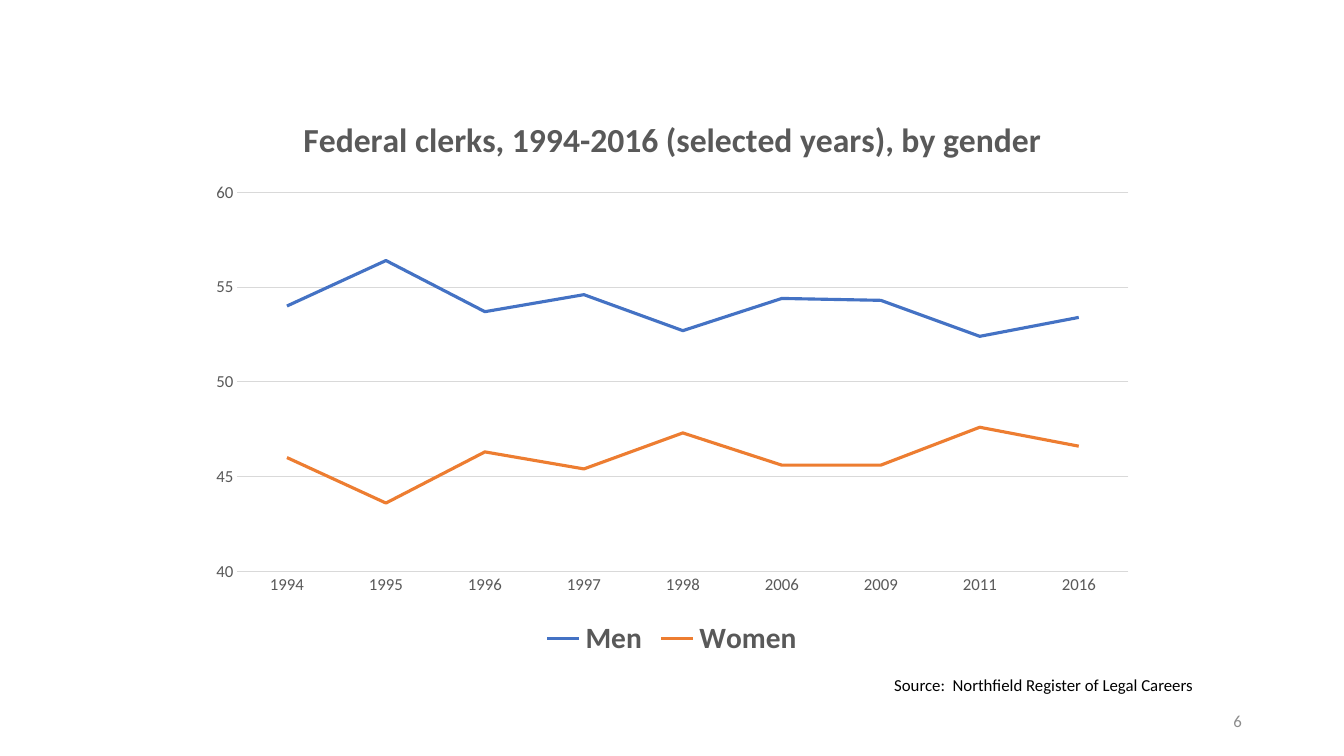
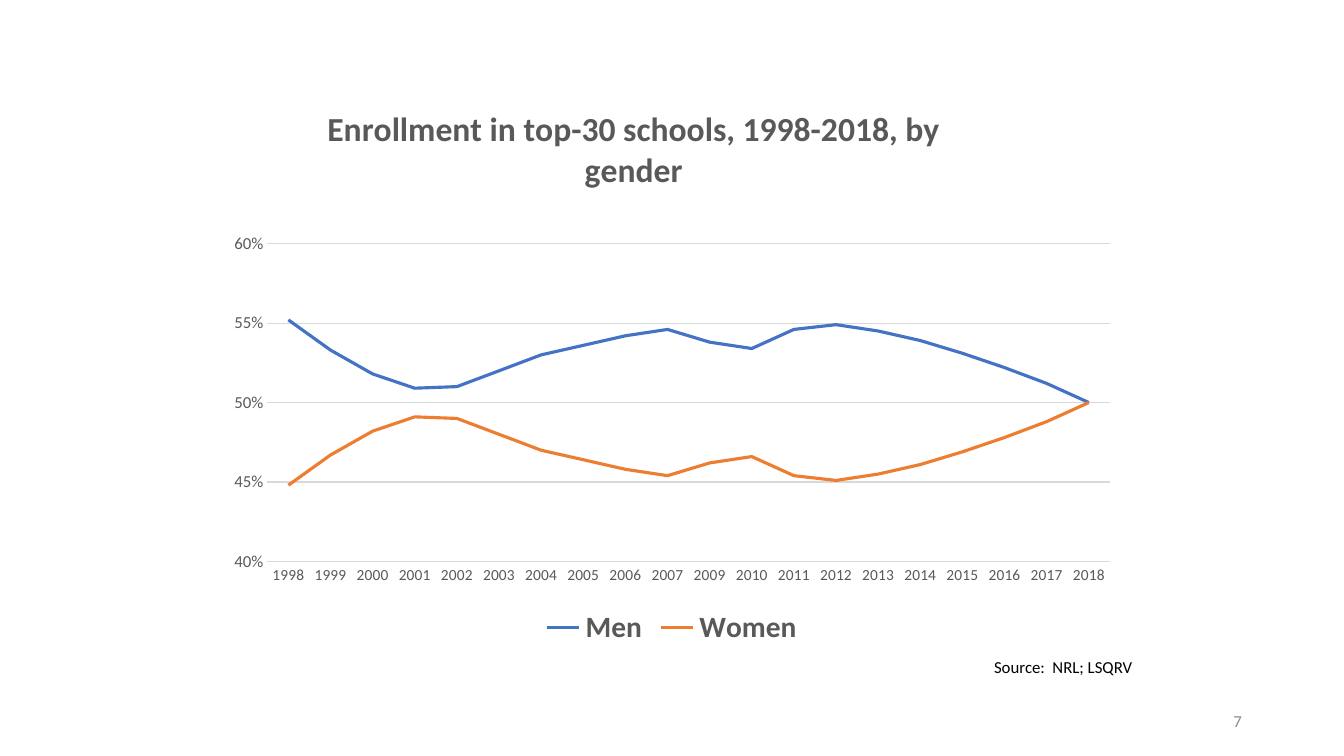
from pptx import Presentation
from pptx.chart.data import CategoryChartData
from pptx.dml.color import RGBColor
from pptx.enum.chart import (
    XL_CHART_TYPE, XL_LEGEND_POSITION, XL_MARKER_STYLE, XL_TICK_MARK)
from pptx.enum.text import MSO_ANCHOR, PP_ALIGN
from pptx.oxml import parse_xml
from pptx.oxml.ns import nsdecls, qn
from pptx.util import Inches, Pt

FONT = "Calibri"
BLACK = RGBColor(0x00, 0x00, 0x00)
DARK_GRAY = RGBColor(0x59, 0x59, 0x59)
PAGE_GRAY = RGBColor(0x8C, 0x8C, 0x8C)
GRID_GRAY = RGBColor(0xD9, 0xD9, 0xD9)
BLUE = RGBColor(0x44, 0x72, 0xC4)
ORANGE = RGBColor(0xED, 0x7D, 0x31)
SERIES_COLORS = {"Men": BLUE, "Women": ORANGE}
CHART_ASPECT = 0.6

# Widths are percent of the slide, title and plot places percent of the chart
CLERKS = {
    "title": "Federal clerks, 1994-2016 (selected years), by gender",
    "years": [1994, 1995, 1996, 1997, 1998, 2006, 2009, 2011, 2016],
    "values": {
        "Men": [54, 56.4, 53.7, 54.6, 52.7, 54.4, 54.3, 52.4, 53.4],
        "Women": [46, 43.6, 46.3, 45.4, 47.3, 45.6, 45.6, 47.6, 46.6],
    },
    "scale": (40, 60, 5),
    "number_format": "0",
    "year_size": 12,
    "width": 70.74,
    "title_at": (10.6, 3.1),
    "plot_at": (4.3, 17.45, 93.7, 66.45),
}
ENROLLMENT = {
    "title": "Enrollment in top-30 schools, 1998-2018, by\ngender",
    "years": [year for year in range(1998, 2019) if year != 2008],
    "values": {
        "Men": [0.552, 0.533, 0.518, 0.509, 0.51, 0.52, 0.53, 0.536, 0.542, 0.546,
                0.538, 0.534, 0.546, 0.549, 0.545, 0.539, 0.531, 0.522, 0.512, 0.5],
        "Women": [0.448, 0.467, 0.482, 0.491, 0.49, 0.48, 0.47, 0.464, 0.458, 0.454,
                  0.462, 0.466, 0.454, 0.451, 0.455, 0.461, 0.469, 0.478, 0.488, 0.5],
    },
    "scale": (0.4, 0.6, 0.05),
    "number_format": "0%",
    "year_size": 11,
    "width": 67.89,
    "title_at": (11.9, 0.2),
    "plot_at": (5.65, 25.45, 92.35, 58.1),
}


def format_font(font, size, color, bold=False):
    font.name = FONT
    font.size = Pt(size)
    font.bold = bold
    font.color.rgb = color


def write_text(frame, text, size=12, color=BLACK, bold=False, align=None):
    """Write each line of the text as a paragraph."""
    for index, line in enumerate(text.split("\n")):
        paragraph = frame.add_paragraph() if index else frame.paragraphs[0]
        paragraph.alignment = align
        run = paragraph.add_run()
        run.text = line
        format_font(run.font, size, color, bold)


def place_part(parent, index, position, inner=False):
    """Fix the place of a chart part, in percent of the chart's size."""
    for old in parent.findall(qn("c:layout")):
        parent.remove(old)
    target = '<c:layoutTarget val="inner"/>' if inner else ""
    modes = "".join(f'<c:{axis}Mode val="edge"/>' for axis in "xy")
    shares = "".join(f'<c:{key} val="{percent / 100:.4f}"/>'
                     for key, percent in zip("xywh", position))
    parent.insert(index, parse_xml(
        f'<c:layout {nsdecls("c")}><c:manualLayout>{target}{modes}{shares}'
        "</c:manualLayout></c:layout>"))


class Deck:
    """Holds the style and the current slide; places are percent of the slide."""

    def __init__(self):
        self.presentation = Presentation()
        self.presentation.slide_width = Inches(13.33)
        self.presentation.slide_height = Inches(7.5)
        self.slide = None

    def across(self, percent):
        return round(self.presentation.slide_width * percent / 100)

    def down(self, percent):
        return round(self.presentation.slide_height * percent / 100)

    def add_slide(self, page):
        self.slide = self.presentation.slides.add_slide(self.presentation.slide_layouts[6])
        self.add_text(str(page), 70.65, 92.67, 22.5, 5.33,
                      color=PAGE_GRAY, anchor=MSO_ANCHOR.MIDDLE)

    def add_text(self, text, left, top, width, height, anchor=MSO_ANCHOR.TOP, **style):
        box = self.slide.shapes.add_textbox(
            self.across(left), self.down(top), self.across(width), self.down(height))
        frame = box.text_frame
        frame.word_wrap = True
        frame.vertical_anchor = anchor
        write_text(frame, text, align=PP_ALIGN.RIGHT, **style)

    def add_source(self, text, left, top):
        self.add_text(text, left, top, 31.36, 4)

    def add_line_chart(self, content):
        data = CategoryChartData(number_format=content["number_format"])
        data.categories = [str(year) for year in content["years"]]
        for name, values in content["values"].items():
            data.add_series(name, values)

        # Chart centred on the slide
        width = self.across(content["width"])
        height = round(width * CHART_ASPECT)
        left = (self.presentation.slide_width - width) // 2
        top = (self.presentation.slide_height - height) // 2
        chart = self.slide.shapes.add_chart(
            XL_CHART_TYPE.LINE, left, top, width, height, data).chart
        format_font(chart.font, 10, BLACK)

        # Title and plot area
        chart.has_title = True
        write_text(chart.chart_title.text_frame, content["title"], size=24,
                   color=DARK_GRAY, bold=True, align=PP_ALIGN.CENTER)
        chart.chart_title.include_in_layout = False
        title = chart.element.find(".//" + qn("c:title"))
        place_part(title, 1, content["title_at"])
        plot_area = chart.element.find(".//" + qn("c:plotArea"))
        place_part(plot_area, 0, content["plot_at"], inner=True)

        # Legend
        chart.has_legend = True
        chart.legend.position = XL_LEGEND_POSITION.BOTTOM
        chart.legend.include_in_layout = False
        format_font(chart.legend.font, 21, DARK_GRAY, bold=True)

        # Axes
        years, values = chart.category_axis, chart.value_axis
        for axis, size in ((years, content["year_size"]), (values, 12)):
            axis.major_tick_mark = axis.minor_tick_mark = XL_TICK_MARK.NONE
            format_font(axis.tick_labels.font, size, DARK_GRAY)
        values.minimum_scale, values.maximum_scale, values.major_unit = content["scale"]
        values.tick_labels.number_format = content["number_format"]
        values.tick_labels.number_format_is_linked = False
        values.format.line.fill.background()
        values.has_major_gridlines = True
        for line in (years.format.line, values.major_gridlines.format.line):
            line.color.rgb = GRID_GRAY
            line.width = Pt(0.75)

        # Series
        chart.plots[0].vary_by_categories = False
        for series in chart.plots[0].series:
            series.smooth = False
            series.marker.style = XL_MARKER_STYLE.NONE
            series.format.line.color.rgb = SERIES_COLORS[series.name]
            series.format.line.width = Pt(2.25)


def main():
    deck = Deck()

    # Federal clerks
    deck.add_slide(6)
    deck.add_line_chart(CLERKS)
    deck.add_source("Source:  Northfield Register of Legal Careers ", 58.44, 88.57)

    # Law school enrollment
    deck.add_slide(7)
    deck.add_line_chart(ENROLLMENT)
    deck.add_source("Source:  NRL; LSQRV", 53.64, 86.27)

    deck.presentation.save("out.pptx")


if __name__ == "__main__":
    main()
